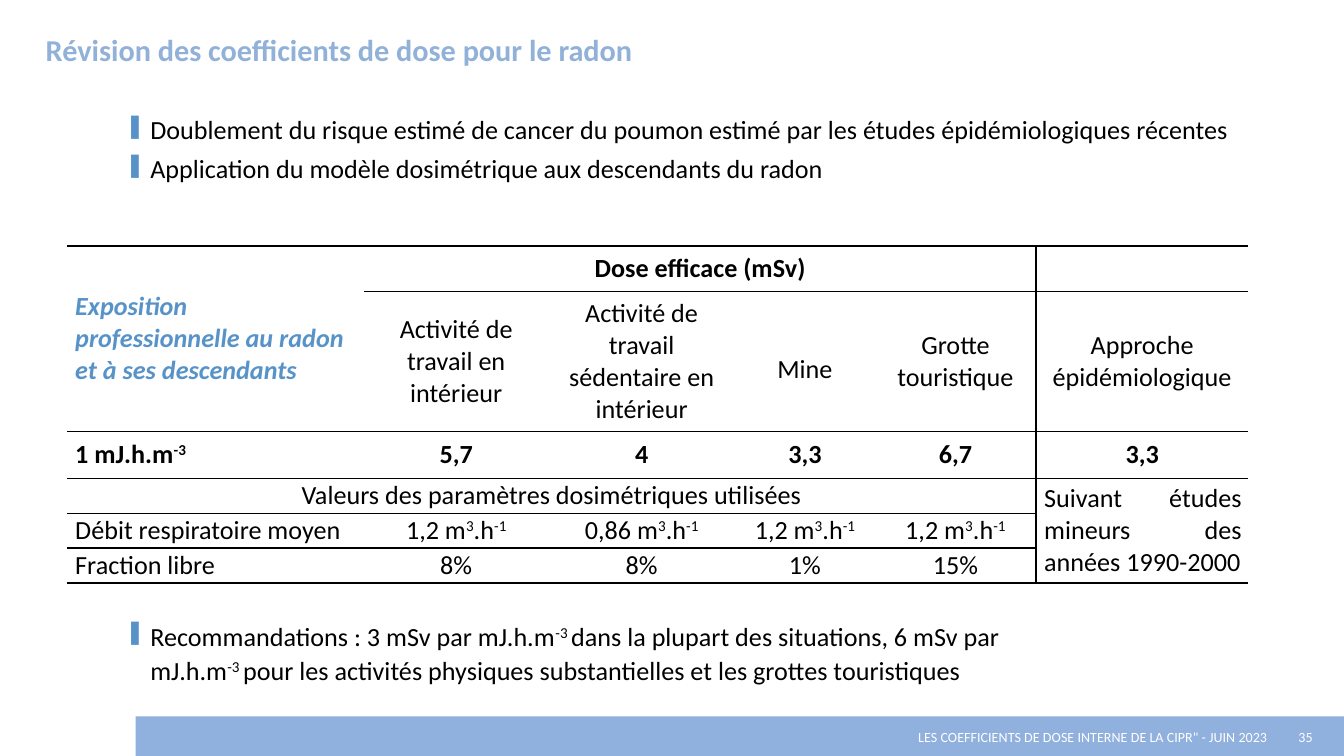
from lxml import etree
from pptx import Presentation
from pptx.dml.color import RGBColor
from pptx.enum.shapes import MSO_SHAPE
from pptx.enum.text import MSO_ANCHOR, PP_ALIGN
from pptx.oxml import parse_xml
from pptx.oxml.ns import nsdecls, qn
from pptx.util import Inches, Pt

COLORS = {"band": "90B0DD", "title": "91B1D9", "accent": "5793C9",
          "text": "000000", "footer": "FFFFFF"}


def add_runs(paragraph, text, size=14, color="text", bold=False, italic=False):
    """Add text run by run; parts between ^ marks are superscript."""
    for index, part in enumerate(text.split("^")):
        if not part:
            continue
        run = paragraph.add_run()
        run.text = part
        run.font.name = "Calibri"
        run.font.size = Pt(size)
        run.font.bold = bold
        run.font.italic = italic
        run.font.color.rgb = RGBColor.from_string(COLORS[color])
        if index % 2:
            run._r.get_or_add_rPr().set("baseline", "30000")


def set_borders(cell, edges):
    """Draw a 1 pt line on each edge named in edges (L, R, T, B), none elsewhere."""
    properties = cell._tc.get_or_add_tcPr()
    for position, edge in enumerate("LRTB"):
        paint = "<a:noFill/>"
        if edge in edges:
            paint = f'<a:solidFill><a:srgbClr val="{COLORS["text"]}"/></a:solidFill>'
        properties.insert(position, parse_xml(
            f'<a:ln{edge} {nsdecls("a")} w="12700">{paint}</a:ln{edge}>'))


prs = Presentation()
prs.slide_width = Inches(10)
prs.slide_height = prs.slide_width * 9 // 16
slide = prs.slides.add_slide(prs.slide_layouts[5])

# Footer
band = slide.shapes.add_shape(MSO_SHAPE.RECTANGLE, Inches(1.01), Inches(5.33),
                              Inches(8.99), Inches(0.3))
band.shadow.inherit = False
band.fill.solid()
band.fill.fore_color.rgb = RGBColor.from_string(COLORS["band"])
band.line.fill.background()

for left, width, align, text in [
    (2.77, 6.66, PP_ALIGN.RIGHT, 'LES COEFFICIENTS DE DOSE INTERNE DE LA CIPR" - JUIN 2023'),
    (9.43, 0.57, PP_ALIGN.CENTER, "35"),
]:
    footer = slide.shapes.add_textbox(Inches(left), Inches(5.33), Inches(width), Inches(0.3))
    frame = footer.text_frame
    frame.word_wrap = True
    frame.vertical_anchor = MSO_ANCHOR.MIDDLE
    frame.margin_left = frame.margin_right = 0
    frame.paragraphs[0].alignment = align
    add_runs(frame.paragraphs[0], text, 7.5, "footer")

# Title
title = slide.shapes.title
title.left, title.top = Inches(0.26), Inches(0.18)
title.width, title.height = Inches(4.59), Inches(0.42)
frame = title.text_frame
frame.word_wrap = True
frame.vertical_anchor = MSO_ANCHOR.TOP
frame.margin_left = Inches(0.08)
frame.paragraphs[0].alignment = PP_ALIGN.LEFT
add_runs(frame.paragraphs[0], "Révision des coefficients de dose pour le radon",
         16.2, "title", bold=True)

# Bulleted statements above and below the table
for top, width, height, statements in [
    (0.78, 8.52, 0.65, [
        "Doublement du risque estimé de cancer du poumon estimé par les études "
        "épidémiologiques récentes",
        "Application du modèle dosimétrique aux descendants du radon"]),
    (4.55, 6.93, 0.58, [
        "Recommandations : 3 mSv par mJ.h.m^-3 ^dans la plupart des situations, "
        "6 mSv par mJ.h.m^-3 ^pour les activités physiques substantielles et les "
        "grottes touristiques"]),
]:
    statement_box = slide.shapes.add_textbox(Inches(0.88), Inches(top),
                                             Inches(width), Inches(height))
    frame = statement_box.text_frame
    frame.word_wrap = True
    for index, statement in enumerate(statements):
        paragraph = frame.add_paragraph() if index else frame.paragraphs[0]
        paragraph.line_spacing = Pt(18)
        if index:
            paragraph.space_before = Pt(3)
        properties = paragraph._p.get_or_add_pPr()
        properties.set("marL", str(Inches(0.14)))
        properties.set("indent", str(-Inches(0.14)))
        color = etree.SubElement(properties, qn("a:buClr"))
        etree.SubElement(color, qn("a:srgbClr"), val=COLORS["accent"])
        etree.SubElement(properties, qn("a:buSzPct"), val="75000")
        etree.SubElement(properties, qn("a:buChar"), char="▌")
        add_runs(paragraph, statement)

# Dose table
flow = "1,2 m^3^.h^-1^"
rows = [
    ["Exposition professionnelle au radon et à ses descendants",
     "Dose efficace (mSv)", "", "", "", ""],
    ["", "Activité de travail en intérieur", "Activité de travail sédentaire en intérieur",
     "Mine", "Grotte touristique", "Approche épidémiologique"],
    ["1 mJ.h.m^-3^", "5,7", "4", "3,3", "6,7", "3,3"],
    ["Valeurs des paramètres dosimétriques utilisées", "", "", "", "",
     "Suivant études mineurs des années 1990-2000"],
    ["Débit respiratoire moyen", flow, "0,86 m^3^.h^-1^", flow, flow, ""],
    ["Fraction libre", "8%", "8%", "1%", "15%", ""],
]
column_widths = [2.21, 1.37, 1.39, 1.04, 1.2, 1.58]
row_heights = [0.34, 1.04, 0.35, 0.26, 0.26, 0.26]
dose_table = slide.shapes.add_table(6, 6, Inches(0.5), Inches(1.83),
                                    Inches(8.79), Inches(2.52)).table
dose_table.first_row = dose_table.horz_banding = False
for column, width in zip(dose_table.columns, column_widths):
    column.width = Inches(width)
for row, height in zip(dose_table.rows, row_heights):
    row.height = Inches(height)

for first, last in [((0, 0), (1, 0)), ((0, 1), (0, 4)), ((3, 0), (3, 4)), ((3, 5), (5, 5))]:
    dose_table.cell(*first).merge(dose_table.cell(*last))

for r, texts in enumerate(rows):
    for c, text in enumerate(texts):
        cell = dose_table.cell(r, c)
        in_heading = r < 2 and c == 0
        in_miners_note = r > 2 and c == 5
        cell.fill.background()
        cell.vertical_anchor = MSO_ANCHOR.MIDDLE
        cell.margin_left = Inches(0.06)
        cell.margin_right = Inches(0.05 if in_miners_note else 0.06)
        cell.margin_top = cell.margin_bottom = 0

        # Merged cells carry the lines around their whole area
        if in_heading or in_miners_note:
            edges = "TB"
        else:
            edges = "TB" + {4: "R"}.get(c, "")
        if c == 5:
            edges += "L"
        set_borders(cell, edges)

        paragraph = cell.text_frame.paragraphs[0]
        if in_heading:
            paragraph.alignment = PP_ALIGN.LEFT
        elif in_miners_note or (c == 0 and r != 3):
            paragraph.alignment = PP_ALIGN.JUSTIFY
        else:
            paragraph.alignment = PP_ALIGN.CENTER
        if text == "Mine":
            paragraph.line_spacing = 1.5
        if text:
            add_runs(paragraph, text, color="accent" if in_heading else "text",
                     bold=r in (0, 2), italic=in_heading)
        else:
            paragraph.font.size = Pt(14)

prs.save("out.pptx")
